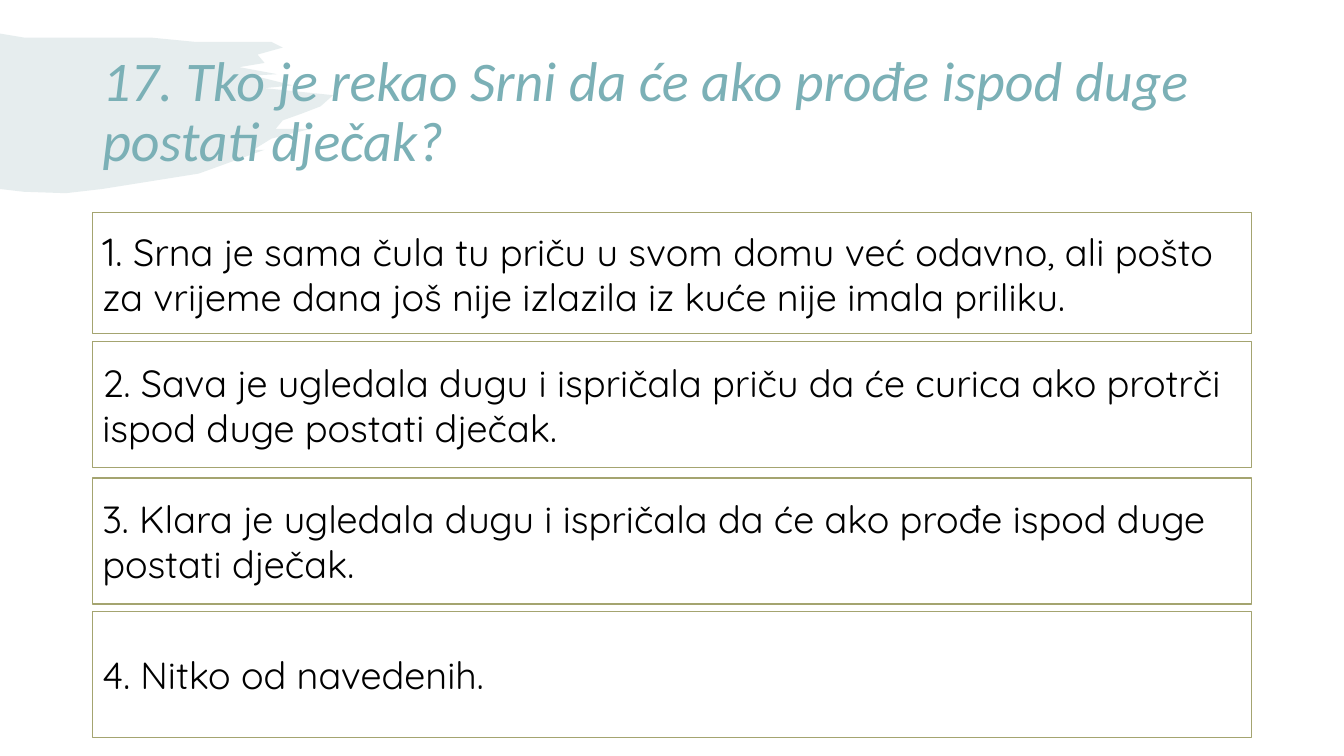
from pptx import Presentation
from pptx.dml.color import RGBColor
from pptx.enum.shapes import MSO_SHAPE
from pptx.enum.text import MSO_ANCHOR, PP_ALIGN
from pptx.util import Pt
from lxml.etree import SubElement
from pptx.oxml.ns import qn

TEAL = RGBColor(0x7B, 0xB0, 0xB6)
BRUSH = RGBColor(0x82, 0xA8, 0xAB)
OLIVE = RGBColor(0xA4, 0xA4, 0x70)
WHITE = RGBColor(0xFF, 0xFF, 0xFF)
BLACK = RGBColor(0, 0, 0)

TITLE = "17. Tko je rekao Srni da će ako prođe ispod duge postati dječak?"
LEFT, WIDTH = 66, 828
# Top, height, then runs of (text, size)
ANSWERS = [
    (151.9, 86.4, [
        ("1. ", 28),
        ("Srna je sama čula tu priču u svom domu već odavno, ali pošto "
         "za vrijeme dana još nije izlazila iz kuće nije imala priliku.", 27)]),
    (244.1, 90, [("2. Sava je ugledala dugu i ispričala priču da će curica "
                  "ako protrči ispod duge postati dječak.", 27)]),
    (341.3, 90, [("3. Klara je ugledala dugu i ispričala da će ako prođe "
                  "ispod duge postati dječak.", 27)]),
    (437, 90, [("4. Nitko od navedenih.", 27)]),
]

# Corners of the brush stroke in points, clockwise from the top left
STROKE = [
    (0, 24.5), (18, 26.6), (73, 26.6), (109, 27.4), (140, 29.5),
    (179, 29.5), (194, 29.7), (202, 33.8), (184, 39), (189, 44.6),
    (171, 47.5), (198, 53.3), (181, 54), (197, 58.3), (209, 61.2),
    (189, 63.4), (238, 67.7), (229, 76.3), (216, 81.4), (202, 86.4),
    (197, 92.2), (222, 92.2), (194, 99.4), (181, 106.6), (189, 106.6),
    (142, 123.8), (73, 135.4), (47, 137.5), (17, 136.8), (0, 135.4),
]


def paint(shape, color):
    shape.shadow.inherit = False
    shape.fill.solid()
    shape.fill.fore_color.rgb = color


def write(shape, runs, font, color, slant=False, space=1.0):
    frame = shape.text_frame
    frame.word_wrap = True
    frame.vertical_anchor = MSO_ANCHOR.MIDDLE
    para = frame.paragraphs[0]
    para.alignment = PP_ALIGN.LEFT
    para.line_spacing = space
    for text, size in runs:
        run = para.add_run()
        run.text = text
        run.font.name = font
        run.font.size = Pt(size)
        run.font.italic = slant
        run.font.color.rgb = color


def main():
    deck = Presentation()
    deck.slide_width, deck.slide_height = Pt(960), Pt(540)
    slide = deck.slides.add_slide(deck.slide_layouts[6])
    shapes = slide.shapes

    pen = shapes.build_freeform(*STROKE[0], scale=Pt(1))
    pen.add_line_segments(STROKE[1:], close=True)
    brush = pen.convert_to_shape()
    paint(brush, BRUSH)
    brush.line.fill.background()
    tint = brush.element.spPr.find(qn("a:solidFill"))[0]
    SubElement(tint, qn("a:alpha")).set("val", "20000")

    title = shapes.add_textbox(Pt(LEFT), Pt(28.8), Pt(WIDTH), Pt(104.4))
    write(title, [(TITLE, 40)], "Calibri", TEAL, slant=True, space=0.9)

    for top, height, runs in ANSWERS:
        box = shapes.add_shape(MSO_SHAPE.ACTION_BUTTON_CUSTOM, Pt(LEFT),
                               Pt(top), Pt(WIDTH), Pt(height))
        paint(box, WHITE)
        box.line.color.rgb = OLIVE
        box.line.width = Pt(1)
        write(box, runs, "Quicksand", BLACK)

    deck.save("out.pptx")


if __name__ == "__main__":
    main()
